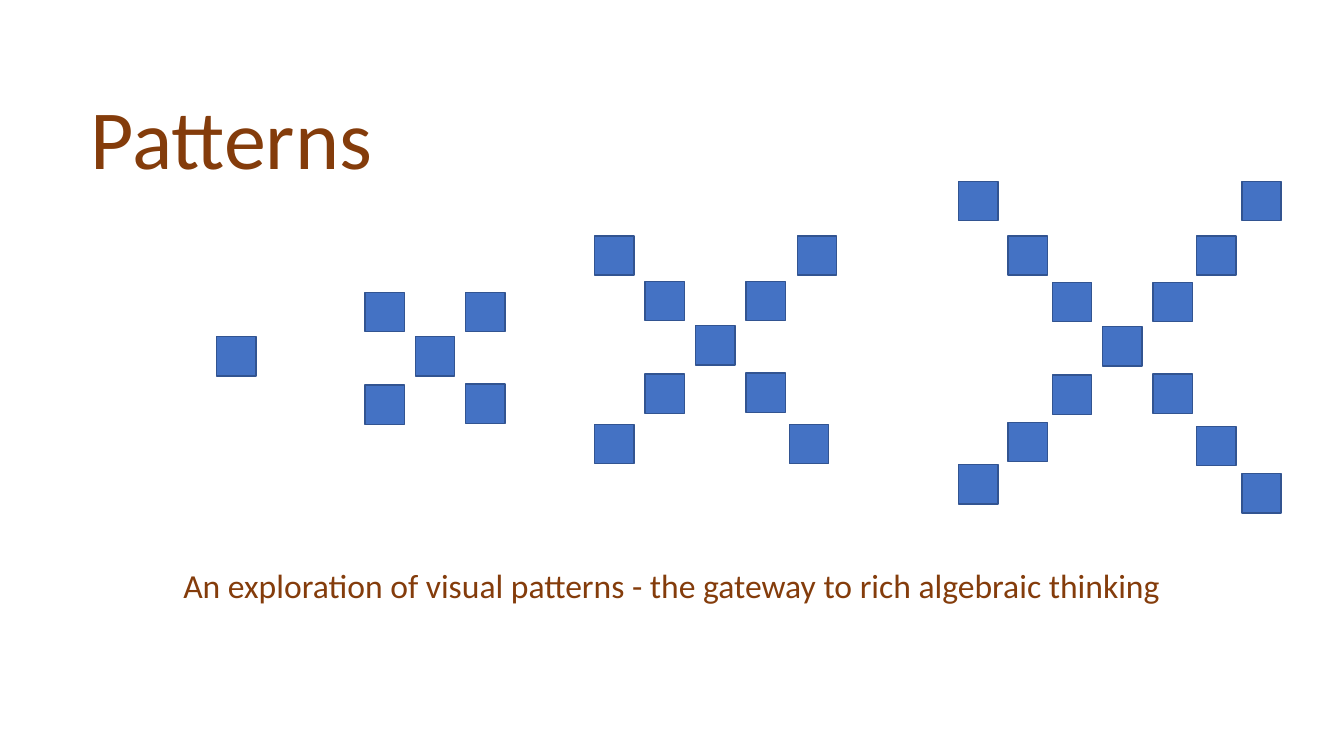
from dataclasses import dataclass

from pptx import Presentation
from pptx.dml.color import RGBColor
from pptx.enum.shapes import MSO_SHAPE
from pptx.enum.text import MSO_ANCHOR, MSO_AUTO_SIZE, PP_ALIGN
from pptx.util import Inches, Pt

RECTANGLE = MSO_SHAPE.RECTANGLE
TOP = MSO_ANCHOR.TOP
GROW = MSO_AUTO_SIZE.SHAPE_TO_FIT_TEXT
LEFT = PP_ALIGN.LEFT

# All lengths are counted in grid cells of a tenth of an inch
CELL = Inches(0.1)
COLUMNS, ROWS = 133.33, 75
TILE_SIZE = 3.9

TILE_FILL, TILE_LINE, TEXT_COLOUR = "4472C4", "325491", "843C0B"


@dataclass(frozen=True)
class Ring:
    """Four tiles around a centre, as column and row offsets."""
    upper_left: tuple[float, float]
    upper_right: tuple[float, float]
    lower_left: tuple[float, float]
    lower_right: tuple[float, float]

    def corners(self) -> list[tuple[float, float]]:
        return [self.upper_left, self.upper_right, self.lower_left, self.lower_right]


@dataclass(frozen=True)
class Pattern:
    column: float
    row: float
    rings: tuple[Ring, ...] = ()


@dataclass(frozen=True)
class Caption:
    text: str
    column: float
    row: float
    width: float
    height: float
    size: int


INNER = Ring((-5, -4.4), (5, -4.4), (-5, 4.8), (5, 4.7))
PATTERNS = [
    Pattern(21.5, 33.4),
    Pattern(41.2, 33.4, (INNER,)),
    Pattern(69, 32.3, (
        INNER,
        Ring((-10, -8.9), (10.1, -8.9), (-10, 9.8), (9.3, 9.8)),
    )),
    Pattern(109.4, 32.4, (
        INNER,
        Ring((-9.4, -9), (9.3, -9), (-9.4, 9.5), (9.3, 9.9)),
        Ring((-14.3, -14.4), (13.8, -14.4), (-14.3, 13.7), (13.8, 14.6)),
    )),
]
HEADING = Caption("Patterns", 8, 8, 39.8, 11.1, 60)
SUBTITLE = Caption(
    "An exploration of visual patterns - the gateway to rich algebraic thinking",
    17.2, 55.6, 102.5, 5, 24)


def cells(count: float) -> int:
    return round(count * CELL)


def colour(value: str) -> RGBColor:
    return RGBColor.from_string(value)


def apply(target, formats: dict) -> None:
    for name, value in formats.items():
        setattr(target, name, value)


def write_caption(holder, caption: Caption) -> None:
    frame = holder.text_frame
    frame.text = caption.text
    apply(frame, {"word_wrap": True, "auto_size": GROW, "vertical_anchor": TOP})
    paragraph = frame.paragraphs[0]
    apply(paragraph, {"alignment": LEFT, "line_spacing": 1.0})
    font = paragraph.runs[0].font
    apply(font, {"name": "Calibri", "size": Pt(caption.size)})
    font.color.rgb = colour(TEXT_COLOUR)
    apply(holder, {
        "left": cells(caption.column), "top": cells(caption.row),
        "width": cells(caption.width), "height": cells(caption.height)})


def draw_tile(slide, column: float, row: float) -> None:
    tile = slide.shapes.add_shape(
        RECTANGLE, cells(column), cells(row), cells(TILE_SIZE), cells(TILE_SIZE))
    tile.shadow.inherit = False
    tile.fill.solid()
    tile.fill.fore_color.rgb = colour(TILE_FILL)
    tile.line.color.rgb = colour(TILE_LINE)
    tile.line.width = Pt(1)


def draw_pattern(slide, pattern: Pattern) -> None:
    draw_tile(slide, pattern.column, pattern.row)
    for ring in pattern.rings:
        for across, down in ring.corners():
            draw_tile(slide, pattern.column + across, pattern.row + down)


def main() -> None:
    deck = Presentation()
    apply(deck, {"slide_width": cells(COLUMNS), "slide_height": cells(ROWS)})
    slide = deck.slides.add_slide(deck.slide_layouts.get_by_name("Title Only"))

    # Heading
    write_caption(slide.shapes.title, HEADING)

    # Growing tile patterns
    for pattern in PATTERNS:
        draw_pattern(slide, pattern)

    # Subtitle
    write_caption(slide.shapes.add_textbox(0, 0, CELL, CELL), SUBTITLE)

    deck.save("out.pptx")


if __name__ == "__main__":
    main()
